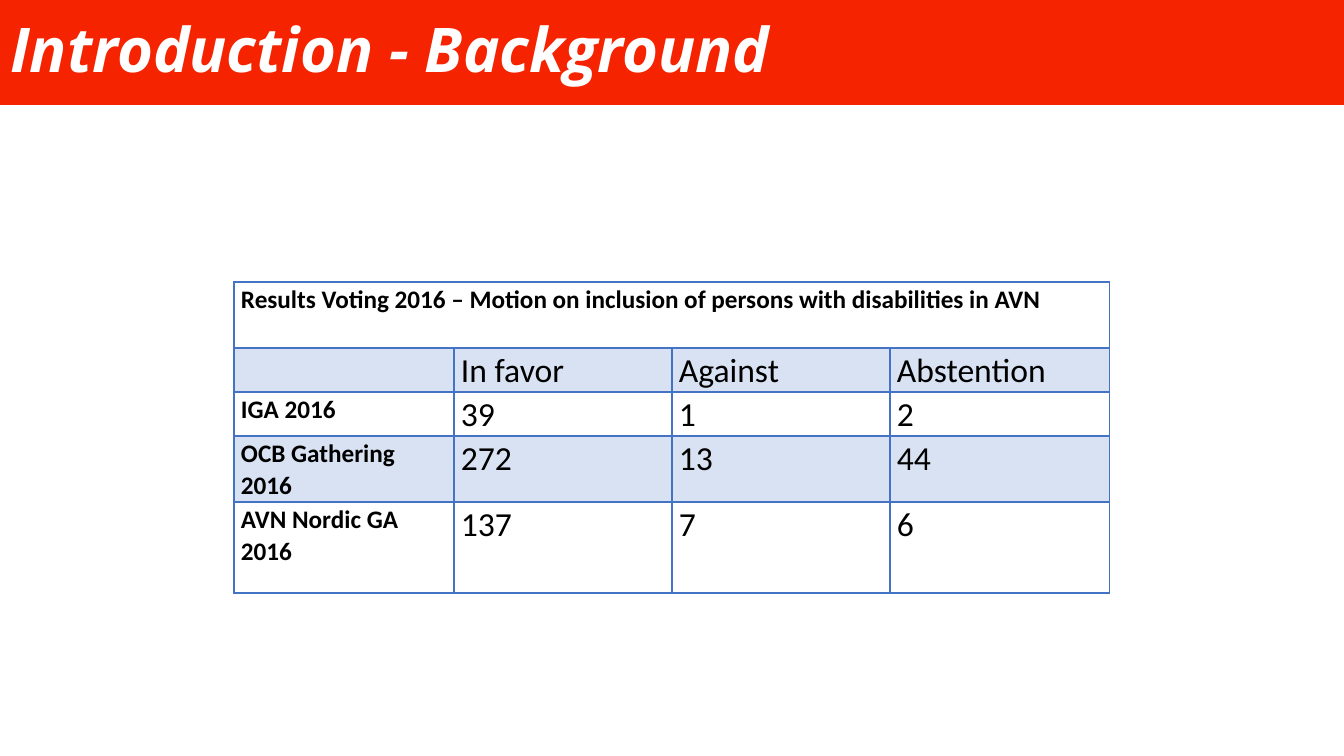
from lxml import etree
from pptx import Presentation
from pptx import util as u
from pptx.dml.color import RGBColor
from pptx.enum import text
from pptx.oxml.ns import qn

TITLE = "Introduction - Background"
ROWS = [
    ["Results Voting 2016 – Motion on inclusion of persons with disabilities in AVN", "", "", ""],
    ["", "In favor", "Against", "Abstention"],
    ["IGA 2016", "39", "1", "2"],
    ["OCB Gathering 2016", "272", "13", "44"],
    ["AVN Nordic GA 2016", "137", "7", "6"],
]
COL_WIDTHS = [220, 218, 218, 220]
ROW_HEIGHTS = [66, 44, 44, 66, 91]
TABLE_LEFT, TABLE_TOP = 234, 282
SLIDE_W, SLIDE_H, TITLE_H = 1344, 756, 105

RED = RGBColor(0xF5, 0x23, 0x00)
BLUE = RGBColor(0x44, 0x72, 0xC4)
WHITE = RGBColor(0xFF, 0xFF, 0xFF)
BLACK = RGBColor(0, 0, 0)


def px(n):
    """Turn pixels into EMU."""
    return u.Emu(round(n * 914400 / 100.8))


def write(tf, content, size, font="Calibri", color=BLACK, bold=False, italic=False, spacing=1.07):
    """Put formatted left-aligned text into a text frame."""
    p = tf.paragraphs[0]
    p.alignment = text.PP_ALIGN.LEFT
    p.line_spacing = spacing
    p.font.size = u.Pt(size)
    if content:
        r = p.add_run()
        r.text = content
        f = r.font
        f.name, f.size, f.bold, f.italic = font, u.Pt(size), bold, italic
        f.color.rgb = color


def set_borders(cell, widths):
    """Draw the cell's borders, with widths in points by side."""
    tcPr = cell._tc.get_or_add_tcPr()
    for side, width in widths.items():
        ln = etree.SubElement(tcPr, qn("a:ln" + side), w=str(u.Pt(width)))
        fill = etree.SubElement(ln, qn("a:solidFill"))
        etree.SubElement(fill, qn("a:srgbClr"), val=str(BLUE))


def shade(cell, banded):
    """Give banded cells a translucent blue and others no fill."""
    if not banded:
        cell.fill.background()
        return
    cell.fill.solid()
    cell.fill.fore_color.rgb = BLUE
    clr = cell._tc.tcPr[-1][0]
    etree.SubElement(clr, qn("a:alpha"), val="20000")


def add_title(slide):
    """Format the title placeholder as a full-width red band."""
    sp = slide.shapes.title
    sp.left, sp.top, sp.width, sp.height = 0, 0, px(SLIDE_W), px(TITLE_H)
    sp.fill.solid()
    sp.fill.fore_color.rgb = RED
    tf = sp.text_frame
    tf.word_wrap = True
    tf.vertical_anchor = text.MSO_ANCHOR.MIDDLE
    write(tf, TITLE, 44, font="Open Sans", color=WHITE, bold=True, italic=True, spacing=0.9)


def add_votes(slide):
    """Build the voting table."""
    frame = slide.shapes.add_table(len(ROWS), len(COL_WIDTHS), px(TABLE_LEFT), px(TABLE_TOP),
                                   px(sum(COL_WIDTHS)), px(sum(ROW_HEIGHTS)))
    table = frame.table
    table.first_row = table.horz_banding = False
    for column, width in zip(table.columns, COL_WIDTHS):
        column.width = px(width)
    for row, height in zip(table.rows, ROW_HEIGHTS):
        row.height = px(height)
    table.cell(0, 0).merge(table.cell(0, len(COL_WIDTHS) - 1))
    for i, row in enumerate(ROWS):
        for j, content in enumerate(row):
            cell = table.cell(i, j)
            cell.margin_left = cell.margin_right = px(7)
            cell.margin_top = cell.margin_bottom = 0
            label = j == 0
            write(cell.text_frame, content, 18 if label else 24, bold=label)
            set_borders(cell, {"L": 1, "R": 1, "T": 2 if i == 1 else 1, "B": 2 if i == 0 else 1})
            shade(cell, i % 2 == 1)


def main():
    """Build and save the slide."""
    prs = Presentation()
    prs.slide_width, prs.slide_height = px(SLIDE_W), px(SLIDE_H)
    slide = prs.slides.add_slide(prs.slide_layouts[5])
    add_title(slide)
    add_votes(slide)
    prs.save("out.pptx")


if __name__ == "__main__":
    main()
